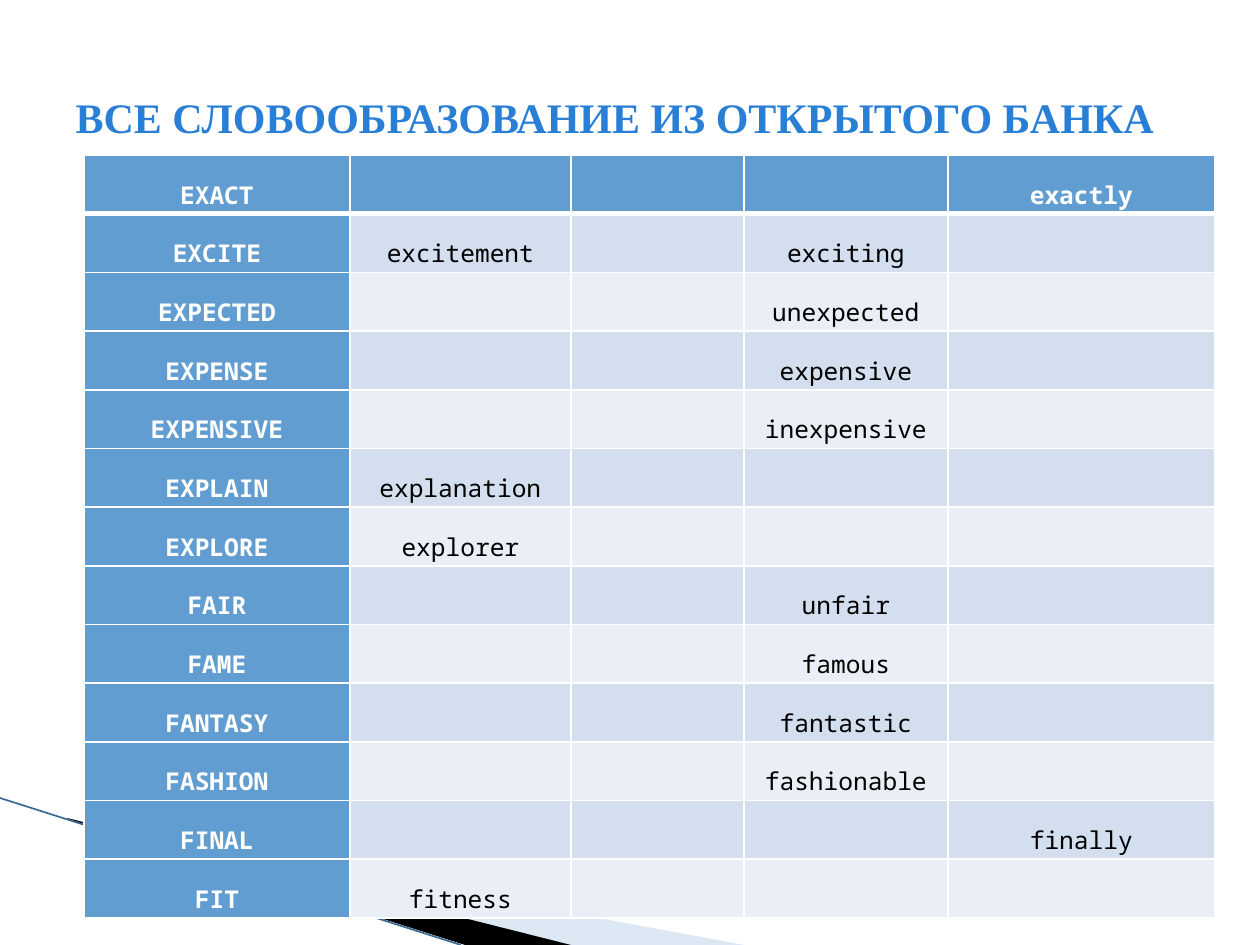
from dataclasses import dataclass

import lxml.etree
import pptx
import pptx.dml.color
import pptx.enum.shapes
import pptx.enum.text
import pptx.oxml.ns
import pptx.util

PX = 914400 / 126
SLIDE_SIZE = (1260, 945)
TITLE_BOX = (63, 38, 1134, 158)
TABLE_BOX = (84, 155, 1131, 763)
SWOOSH_BOX = (0, 798, 744, 147)
COLUMN_WIDTHS = (266, 221, 173, 204, 267)


@dataclass(frozen=True)
class Theme:
    title_font: str = "Times New Roman"
    table_font: str = "Noto Sans Mono"
    title_size: int = 24
    table_size: int = 14
    title: str = "297FD5"
    header: str = "629DD1"
    bands: tuple = ("EAEFF7", "D3DFEE")
    light: str = "FFFFFF"
    dark: str = "000000"
    pale_swoosh: str = "ABC6E6"
    swoosh_edge: str = "3A6A96"


THEME = Theme()
TITLE = "ВСЕ СЛОВООБРАЗОВАНИЕ ИЗ ОТКРЫТОГО БАНКА"
WORD_ROWS = [
    ("EXACT", "", "", "", "exactly"),
    ("EXCITE", "excitement", "", "exciting", ""),
    ("EXPECTED", "", "", "unexpected", ""),
    ("EXPENSE", "", "", "expensive", ""),
    ("EXPENSIVE", "", "", "inexpensive", ""),
    ("EXPLAIN", "explanation", "", "", ""),
    ("EXPLORE", "explorer", "", "", ""),
    ("FAIR", "", "", "unfair", ""),
    ("FAME", "", "", "famous", ""),
    ("FANTASY", "", "", "fantastic", ""),
    ("FASHION", "", "", "fashionable", ""),
    ("FINAL", "", "", "", "finally"),
    ("FIT", "fitness", "", "", ""),
]


def emu(*lengths):
    return [pptx.util.Emu(round(length * PX)) for length in lengths]


def rgb(color):
    return pptx.dml.color.RGBColor.from_string(color)


def add_child(parent, tag, **attributes):
    return lxml.etree.SubElement(parent, pptx.oxml.ns.qn(tag), attributes)


def format_font(font, name, size, color, bold):
    font.name = name
    font.size = pptx.util.Pt(size)
    font.color.rgb = rgb(color)
    font.bold = bold


def add_wedge(slide, box, points, color, opacity=None):
    """Draw a filled outline from points relative to the box."""
    left, top = box[:2]
    corners = [(left + x, top + y) for x, y in points]
    builder = slide.shapes.build_freeform(*corners[0], scale=PX)
    builder.add_line_segments(corners[1:], close=True)
    wedge = builder.convert_to_shape()
    wedge.shadow.inherit = False
    wedge.fill.solid()
    wedge.fill.fore_color.rgb = rgb(color)
    wedge.line.fill.background()
    if opacity is not None:
        solid = wedge.fill._xPr.find(pptx.oxml.ns.qn("a:solidFill"))
        add_child(solid[0], "a:alpha", val=str(opacity * 1000))


def add_swoosh(slide, box):
    left, top, width, height = box
    add_wedge(slide, box, [(69, 22), (width, height), (571, height), (69, 21)],
              THEME.pale_swoosh, opacity=40)
    add_wedge(slide, box, [(67, 20), (571, height), (465, height), (68, 21)],
              THEME.dark)
    edge = slide.shapes.add_connector(
        pptx.enum.shapes.MSO_CONNECTOR.STRAIGHT,
        *emu(left, top, left + 461, top + height))
    edge.line.color.rgb = rgb(THEME.swoosh_edge)
    edge.line.width = pptx.util.Pt(0.95)
    add_child(edge._element.spPr, "a:effectLst")


def place_title(slide, box):
    title = slide.shapes.title
    title.left, title.top, title.width, title.height = emu(*box)
    frame = title.text_frame
    frame.text = TITLE
    frame.word_wrap = True
    frame.vertical_anchor = pptx.enum.text.MSO_ANCHOR.MIDDLE
    heading = frame.paragraphs[0]
    heading.alignment = pptx.enum.text.PP_ALIGN.LEFT
    format_font(heading.runs[0].font, THEME.title_font, THEME.title_size,
                THEME.title, True)


def set_borders(cell, top, bottom):
    """Give the cell white borders; top and bottom are widths in points."""
    properties = cell._tc.get_or_add_tcPr()
    for side, points in (("L", 1), ("R", 1), ("T", top), ("B", bottom)):
        border = add_child(properties, f"a:ln{side}",
                           w=str(pptx.util.Pt(points)))
        add_child(add_child(border, "a:solidFill"), "a:srgbClr",
                  val=THEME.light)


def format_cell(cell, word, row, column):
    is_header = row == 0 or column == 0
    set_borders(cell, top=3 if row == 1 else 1, bottom=3 if row == 0 else 1)
    cell.fill.solid()
    cell.fill.fore_color.rgb = rgb(
        THEME.header if is_header else THEME.bands[row % 2])
    cell.margin_left = cell.margin_right = pptx.util.Inches(0.03)
    cell.margin_top = cell.margin_bottom = pptx.util.Inches(0.02)
    cell.vertical_anchor = pptx.enum.text.MSO_ANCHOR.BOTTOM
    paragraph = cell.text_frame.paragraphs[0]
    paragraph.alignment = pptx.enum.text.PP_ALIGN.CENTER
    paragraph.line_spacing = 1.5
    if word:
        paragraph.text = word
        format_font(paragraph.runs[0].font, THEME.table_font, THEME.table_size,
                    THEME.light if is_header else THEME.dark, is_header)


def add_word_table(slide, box):
    table = slide.shapes.add_table(
        len(WORD_ROWS), len(COLUMN_WIDTHS), *emu(*box)).table
    for column, width in zip(table.columns, emu(*COLUMN_WIDTHS)):
        column.width = width
    for row, words in enumerate(WORD_ROWS):
        for column, word in enumerate(words):
            format_cell(table.cell(row, column), word, row, column)


def main():
    deck = pptx.Presentation()
    deck.slide_width, deck.slide_height = emu(*SLIDE_SIZE)
    slide = deck.slides.add_slide(deck.slide_layouts.get_by_name("Title Only"))
    add_swoosh(slide, SWOOSH_BOX)
    add_word_table(slide, TABLE_BOX)
    place_title(slide, TITLE_BOX)
    deck.save("out.pptx")


if __name__ == "__main__":
    main()
